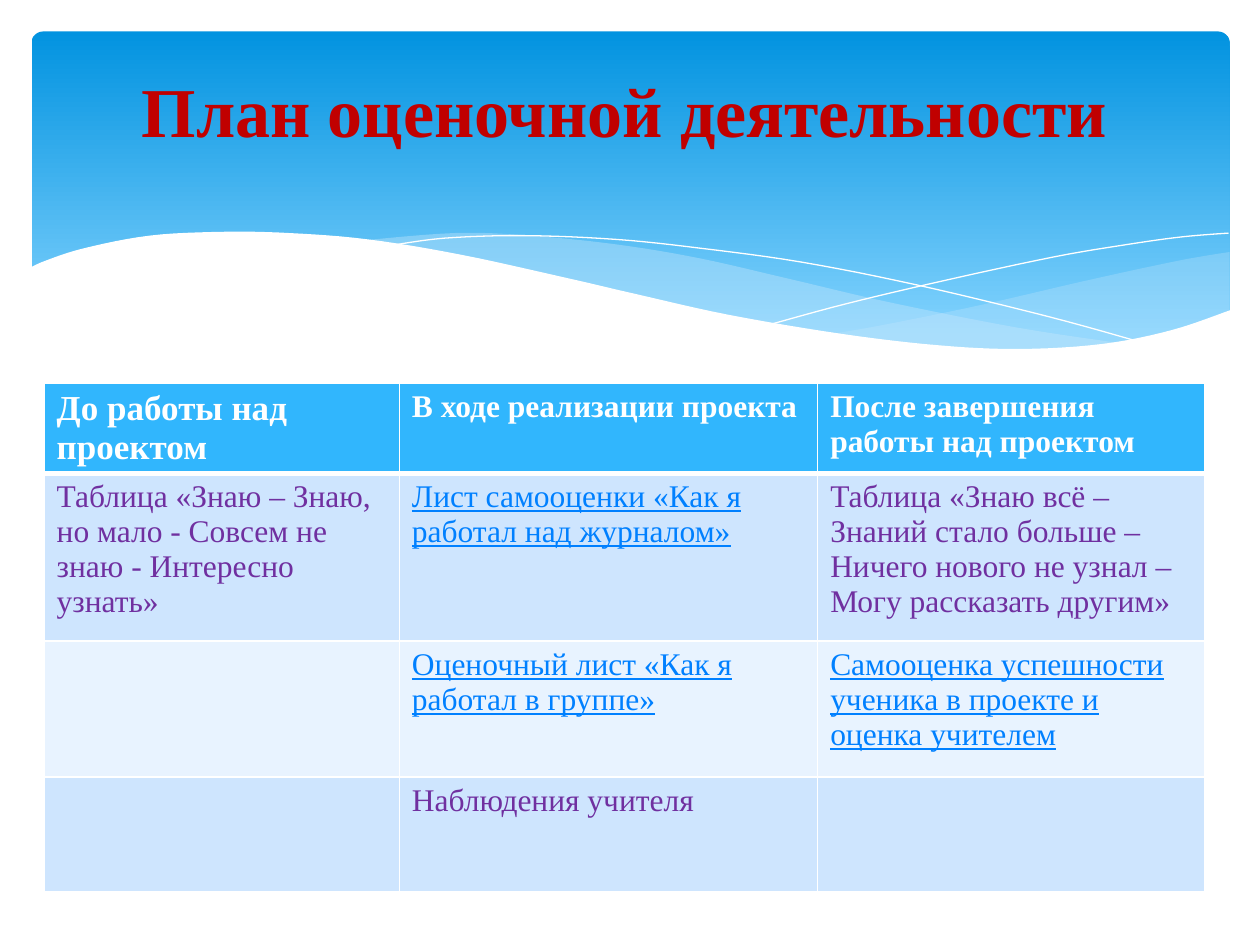
"""Build the slide with the plan of project assessment."""
from lxml import etree
from pptx import Presentation
from pptx import util as u
from pptx.dml.color import RGBColor
from pptx.enum import shapes, text
from pptx.oxml.ns import qn

FACE = "Times New Roman"
TITLE = "План оценочной деятельности"
HEAD = {"size": 18, "bold": True, "color": "FFFFFF"}
BIG = {**HEAD, "size": 20}
PLAIN = {"size": 18, "bold": False, "color": "7030A0"}
LINK = {**PLAIN, "color": "0080FF", "underline": True}
ROWS = [
    [("До работы над\nпроектом", BIG), ("В ходе реализации проекта", HEAD),
     ("После завершения работы над проектом", HEAD)],
    [("Таблица «Знаю – Знаю, но мало - Совсем не знаю - Интересно узнать»", PLAIN),
     ("Лист самооценки «Как я работал над журналом»", LINK),
     ("Таблица «Знаю всё – Знаний стало больше – Ничего нового не узнал – "
      "Могу рассказать другим»", PLAIN)],
    [("", PLAIN), ("Оценочный лист «Как я работал в группе»", LINK),
     ("Самооценка успешности ученика в проекте и оценка учителем", LINK)],
    [("", PLAIN), ("Наблюдения учителя", PLAIN), ("", PLAIN)],
]
WIDE = [2.82, 3.32, 3.07]
HIGH = [0.59, 1.33, 1.08, 0.91]
FILLS = ["31B6FD", "CEE5FE", "E8F3FF", "CEE5FE"]

WAVES = [
    {"fill": "C6E7FC", "alpha": 29, "arcs": [
        [(9.76, 2), (9.35, 2.07), (8.61, 2.23), (7.79, 2.42), (7.06, 2.57), (6.61, 2.65)],
        [(6.61, 2.65), (7.19, 2.72), (7.69, 2.77), (8.14, 2.78), (8.63, 2.75),
         (9.05, 2.69), (9.42, 2.59), (9.76, 2.47)]]},
    {"fill": "C6E7FC", "alpha": 40, "arcs": [
        [(8.93, 2.73), (8.07, 2.6), (7.06, 2.4), (6.29, 2.22), (5.55, 2.05),
         (4.89, 1.94), (4.2, 1.87), (3.61, 1.85), (2.86, 1.91)],
        [(2.86, 1.91), (3.62, 2.03), (4.49, 2.22), (5.3, 2.4), (6.01, 2.55),
         (6.8, 2.68), (7.48, 2.76), (8.07, 2.78), (8.57, 2.77), (8.93, 2.73)]]},
    {"line": "FFFFFF", "arcs": [
        [(3.09, 1.95), (3.53, 1.89), (4.16, 1.87), (4.89, 1.9), (5.56, 1.97),
         (6.36, 2.08), (7.27, 2.26), (8.31, 2.51), (9.07, 2.72)]]},
    {"line": "FFFFFF", "arcs": [
        [(6.13, 2.57), (6.72, 2.41), (7.48, 2.23), (8.36, 2.04), (8.95, 1.94),
         (9.38, 1.88), (9.75, 1.85)]]},
    {"fill": "FFFFFF", "arcs": [
        [(9.77, 2.46), (9.3, 2.62), (8.75, 2.73), (8.09, 2.77), (7.44, 2.74),
         (6.68, 2.65), (5.79, 2.5), (5.03, 2.33), (4.47, 2.2), (3.65, 2.02),
         (2.92, 1.9), (2.3, 1.85), (1.77, 1.84), (1.19, 1.87), (0.67, 1.97),
         (0.36, 2.07), (0.23, 2.13)],
        [(0.23, 3.29), (9.77, 3.29)]]},
]


def hue(code):
    """Turn a hex string into a colour."""
    return RGBColor.from_string(code)


def bend(knots, steps=6):
    """Return points of a smooth curve through the knots."""
    ends = [knots[0], *knots, knots[-1]]
    dots = [knots[0]]
    for a, b, c, d in zip(ends, ends[1:], ends[2:], ends[3:]):
        for n in range(1, steps + 1):
            t = n / steps
            dots.append(tuple(
                q + t * (r - p) / 2 + t * t * (2 * p - 5 * q + 4 * r - s) / 2
                + t ** 3 * (3 * q - p - 3 * r + s) / 2
                for p, q, r, s in zip(a, b, c, d)))
    return dots


def draw(slide, wave):
    """Draw one filled wave or one thin curve."""
    dots = [tuple(map(u.Inches, dot)) for arc in wave["arcs"] for dot in bend(arc)]
    pen = slide.shapes.build_freeform(*dots[0])
    pen.add_line_segments(dots[1:], close="fill" in wave)
    form = pen.convert_to_shape()
    form.shadow.inherit = False
    if "fill" in wave:
        form.fill.solid()
        form.fill.fore_color.rgb = hue(wave["fill"])
        form.line.fill.background()
    else:
        form.fill.background()
        form.line.color.rgb = hue(wave["line"])
        form.line.width = 0
    if "alpha" in wave:
        tint = form.fill._xPr.find(".//" + qn("a:srgbClr"))
        etree.SubElement(tint, qn("a:alpha"), val=str(wave["alpha"] * 1000))


def style(para, look):
    """Apply a dict of format values to the font of a paragraph's runs."""
    for run in para.runs:
        run.font.name = FACE
        for name, value in look.items():
            if name == "color":
                run.font.color.rgb = hue(value)
            else:
                setattr(run.font, name, u.Pt(value) if name == "size" else value)


def edge(cell, sides):
    """Give a cell white borders of the widths named by side."""
    props = cell._tc.get_or_add_tcPr()
    for n, (side, width) in enumerate(sides.items()):
        line = etree.Element(qn("a:ln" + side), w=str(u.Pt(width)))
        fill = etree.SubElement(line, qn("a:solidFill"))
        etree.SubElement(fill, qn("a:srgbClr"), val="FFFFFF")
        props.insert(n, line)


def grid(slide):
    """Add the table of assessment stages."""
    box = map(u.Inches, (0.35, 3.04, sum(WIDE), sum(HIGH)))
    table = slide.shapes.add_table(len(ROWS), len(WIDE), *box).table
    for col, width in zip(table.columns, WIDE):
        col.width = u.Inches(width)
    for r, (row, items) in enumerate(zip(table.rows, ROWS)):
        row.height = u.Inches(HIGH[r])
        for cell, (words, look) in zip(row.cells, items):
            cell.text = words
            cell.fill.solid()
            cell.fill.fore_color.rgb = hue(FILLS[r])
            edge(cell, {"L": 1, "R": 1, "T": 3 if r == 1 else 1, "B": 3 if r == 0 else 1})
            for para in cell.text_frame.paragraphs:
                style(para, look)


def main():
    """Build and save the slide."""
    deck = Presentation()
    deck.slide_width, deck.slide_height = u.Inches(10), u.Inches(7.5)
    slide = deck.slides.add_slide(deck.slide_layouts[5])
    title = slide.shapes.title

    sky = slide.shapes.add_shape(
        shapes.MSO_SHAPE.ROUNDED_RECTANGLE, *map(u.Inches, (0.25, 0.25, 9.51, 2.7)))
    sky.adjustments[0] = 0.034
    sky.shadow.inherit = False
    sky.line.fill.background()
    sky.fill.gradient()
    sky.fill.gradient_angle = 270
    for stop, (place, code) in zip(sky.fill.gradient_stops, [(0, "0293E0"), (0.9, "83D3FE")]):
        stop.position = place
        stop.color.rgb = hue(code)
    for wave in WAVES:
        draw(slide, wave)
    grid(slide)

    slide.shapes._spTree.append(title._element)
    for name, value in zip(("left", "top", "width", "height"), (0.35, 0.36, 9.21, 1.02)):
        setattr(title, name, u.Inches(value))
    title.text = TITLE
    title.text_frame.vertical_anchor = text.MSO_ANCHOR.MIDDLE
    para = title.text_frame.paragraphs[0]
    para.alignment = text.PP_ALIGN.CENTER
    style(para, {"size": 40, "bold": True, "color": "C00000"})
    deck.save("out.pptx")


if __name__ == "__main__":
    main()
